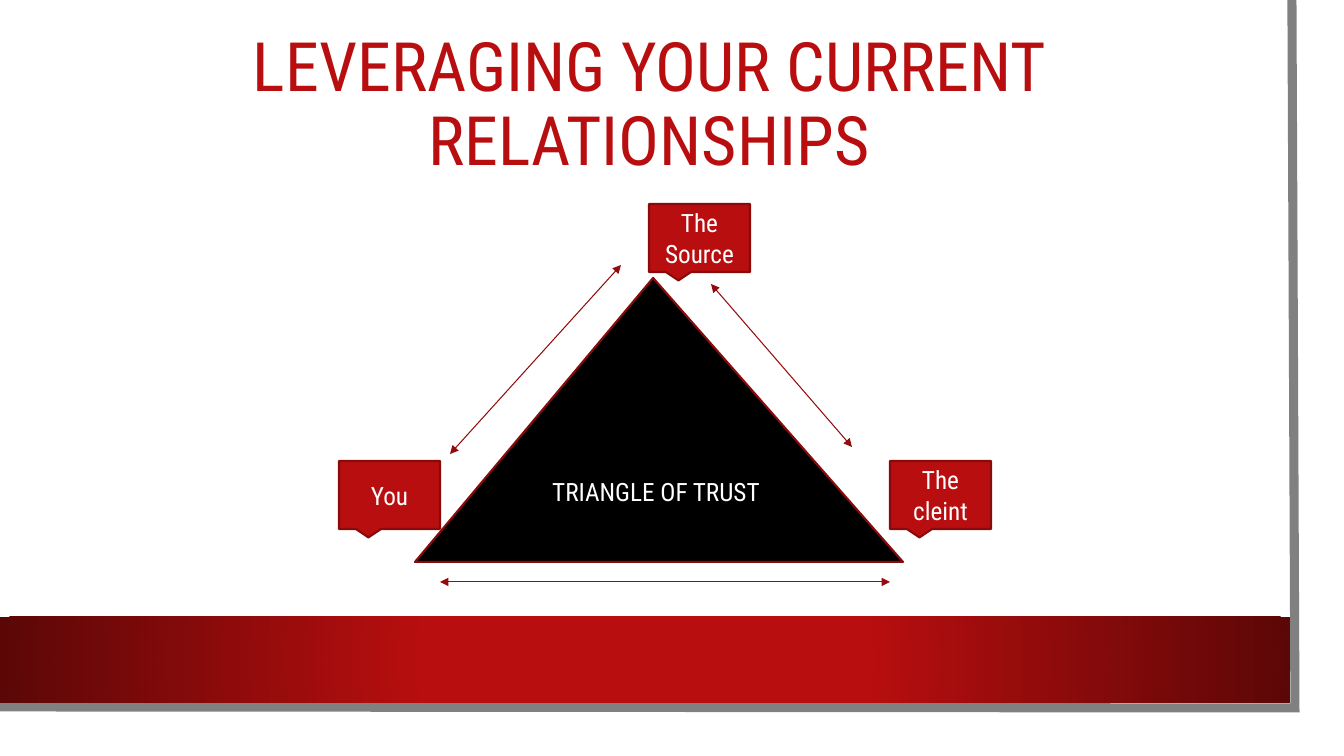
from dataclasses import dataclass

from lxml import etree
from pptx import Presentation
from pptx.dml.color import RGBColor
from pptx.enum.shapes import MSO_CONNECTOR, MSO_SHAPE
from pptx.enum.text import MSO_ANCHOR, PP_ALIGN
from pptx.oxml import parse_xml
from pptx.oxml.ns import nsdecls, qn
from pptx.util import Emu, Pt

# Content: boxes are left, top, width, height in px
TITLE = "LEVERAGING YOUR CURRENT RELATIONSHIPS"
TITLE_BOX = (76, 79, 1146, 127)
TITLE_LIFT = 36
TRIANGLE = ("TRIANGLE OF TRUST", (415, 278, 488, 284))
TRIANGLE_APEX = 0.488
CALLOUT_SIZE = (101, 68)
CALLOUTS = [("The cleint", (890, 461)), ("The Source", (649, 204)), ("You", (339, 461))]
ARROWS = [((440, 582), (890, 582)), ((450, 454), (621, 265)), ((852, 447), (711, 284))]
PAGE = (0, 0, 1320, 733)
PAGE_EDGE = [(1292, 0), (1295, 708), (-3, 707)]
BAND = (0, 617, 1290, 86)


@dataclass(frozen=True)
class Theme:
    font: str = "Roboto Condensed"
    title_size: float = 48.6
    label_size: float = 18
    red: str = "B80E0F"
    dark_red: str = "5C0707"
    outline: str = "880A0B"
    arrow: str = "930B0C"
    edge: str = "808080"
    black: str = "000000"
    white: str = "FFFFFF"


theme = Theme()
PX = 914400 / 100.8


def px(*values):
    return [Emu(round(v * PX)) for v in values]


def rgb(value):
    return RGBColor.from_string(value)


def write(shape, text, size, color):
    tf = shape.text_frame
    tf.word_wrap = True
    tf.vertical_anchor = MSO_ANCHOR.MIDDLE
    p = tf.paragraphs[0]
    p.alignment = PP_ALIGN.CENTER
    r = p.add_run()
    r.text = text
    r.font.name = theme.font
    r.font.size = Pt(size)
    r.font.color.rgb = rgb(color)
    return tf


def add_shape(s, kind, box, fill, outline=None):
    sp = s.shapes.add_shape(kind, *px(*box))
    sp.shadow.inherit = False
    sp.fill.solid()
    sp.fill.fore_color.rgb = rgb(fill)
    if outline:
        sp.line.color.rgb = rgb(outline)
        sp.line.width = Pt(1.5)
    else:
        sp.line.fill.background()
    return sp


def add_arrow(s, start, end):
    line = s.shapes.add_connector(MSO_CONNECTOR.STRAIGHT, *px(*start, *end))
    line.line.color.rgb = rgb(theme.arrow)
    line.line.width = Pt(0.75)
    ln = line.line._get_or_add_ln()
    for tag in ("a:headEnd", "a:tailEnd"):
        etree.SubElement(ln, qn(tag)).set("type", "triangle")
    etree.SubElement(line._element.spPr, qn("a:effectLst"))


def fill_radial(sp, inner, outer):
    spPr = sp._element.spPr
    grad = parse_xml(
        f'<a:gradFill {nsdecls("a")} rotWithShape="1"><a:gsLst>'
        f'<a:gs pos="34000"><a:srgbClr val="{inner}"/></a:gs>'
        f'<a:gs pos="100000"><a:srgbClr val="{outer}"/></a:gs></a:gsLst>'
        '<a:path path="circle"><a:fillToRect l="50000" t="50000" r="50000" b="50000"/>'
        '</a:path></a:gradFill>')
    spPr.replace(spPr.find(qn("a:solidFill")), grad)


def add_backdrop(s):
    add_shape(s, MSO_SHAPE.RECTANGLE, PAGE, theme.white)
    # Grey page edge
    builder = s.shapes.build_freeform(*PAGE_EDGE[0], scale=PX)
    builder.add_line_segments(PAGE_EDGE[1:], close=False)
    edge = builder.convert_to_shape()
    edge.shadow.inherit = False
    edge.fill.background()
    edge.line.color.rgb = rgb(theme.edge)
    edge.line.width = Pt(6.5)
    etree.SubElement(edge.line._get_or_add_ln(), qn("a:miter")).set("lim", "800000")
    # Red band
    band = add_shape(s, MSO_SHAPE.RECTANGLE, BAND, theme.red)
    fill_radial(band, theme.red, theme.dark_red)


def main():
    prs = Presentation()
    prs.slide_width, prs.slide_height = px(1344, 756)
    s = prs.slides.add_slide(prs.slide_layouts[6])
    add_backdrop(s)

    # Title, lifted above the middle of its box
    title = s.shapes.add_textbox(*px(*TITLE_BOX))
    tf = write(title, TITLE, theme.title_size, theme.red)
    tf.paragraphs[0].line_spacing = 0.9
    tf.margin_bottom = tf.margin_top + px(2 * TITLE_LIFT)[0]

    # Triangle and its corners
    text, box = TRIANGLE
    triangle = add_shape(s, MSO_SHAPE.ISOSCELES_TRIANGLE, box, theme.black, theme.outline)
    triangle.adjustments[0] = TRIANGLE_APEX
    write(triangle, text, theme.label_size, theme.white)
    for text, corner in CALLOUTS:
        callout = add_shape(s, MSO_SHAPE.RECTANGULAR_CALLOUT, corner + CALLOUT_SIZE,
                            theme.red, theme.outline)
        write(callout, text, theme.label_size, theme.white)

    # Arrows along the sides
    for start, end in ARROWS:
        add_arrow(s, start, end)

    prs.save("out.pptx")


if __name__ == "__main__":
    main()
